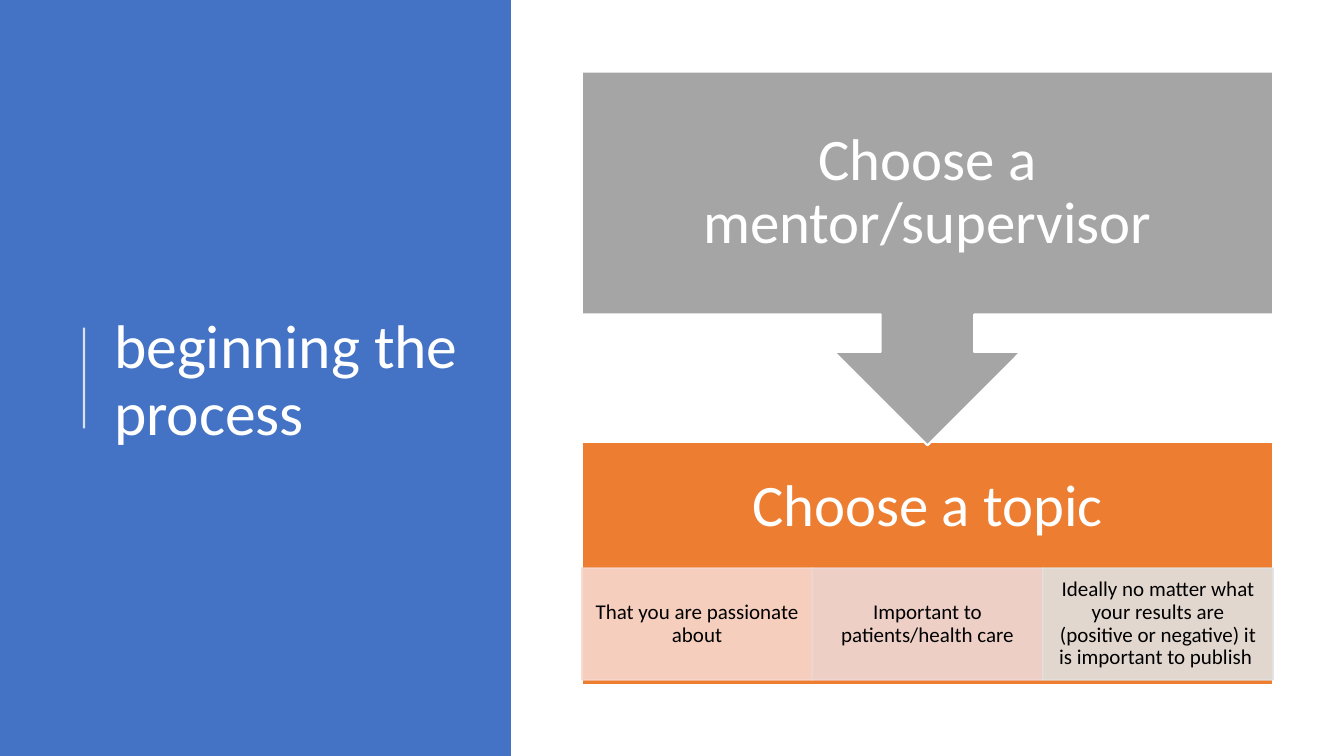
import pptx
import pptx.util
import pptx.dml.color
import pptx.enum.shapes
import pptx.enum.text
import pptx.oxml
import pptx.oxml.ns

Pt = pptx.util.Pt
KIND = pptx.enum.shapes.MSO_SHAPE
ALIGN = pptx.enum.text.PP_ALIGN
WHITE = "FFFFFF"


def paint(fill, color, alpha=100):
    fill.solid()
    fill.fore_color.rgb = pptx.dml.color.RGBColor.from_string(color)
    if alpha < 100:
        tint = fill._xPr.find(".//" + pptx.oxml.ns.qn("a:srgbClr"))
        node = pptx.oxml.parse_xml(
            f'<a:alpha {pptx.oxml.ns.nsdecls("a")} val="{alpha * 1000}"/>')
        tint.append(node)


def write(shape, text, size, color, pads, align):
    frame = shape.text_frame
    frame.text = text
    frame.word_wrap = True
    frame.vertical_anchor = pptx.enum.text.MSO_ANCHOR.MIDDLE
    frame.margin_left, frame.margin_top, frame.margin_right, frame.margin_bottom = map(Pt, pads)
    para = frame.paragraphs[0]
    para.alignment = align
    para.line_spacing = 0.9
    font = para.runs[0].font
    font.name = "Calibri"
    font.size = Pt(size)
    font.color.rgb = pptx.dml.color.RGBColor.from_string(color)


def block(slide, kind, box, fill, edge=None, width=1.5, alpha=100):
    shape = slide.shapes.add_shape(kind, *map(Pt, box))
    shape.shadow.inherit = False
    paint(shape.fill, fill, alpha)
    if edge:
        paint(shape.line.fill, edge, alpha)
        shape.line.width = Pt(width)
    else:
        shape.line.fill.background()
    return shape


def panel(slide, box, title):
    left, top, width, height = box
    block(slide, KIND.RECTANGLE, box, "4472C4")
    area = (left + 74.4, top + 56.2, width - 99.4, height - 106.6)
    text = slide.shapes.add_textbox(*map(Pt, area))
    write(text, title, 44, WHITE, (7.2, 3.6, 7.2, 3.6), ALIGN.LEFT)
    mid = top + height / 2
    ends = (left + 60, mid + 36, left + 60, mid - 36)
    rule = slide.shapes.add_connector(
        pptx.enum.shapes.MSO_CONNECTOR.STRAIGHT, *map(Pt, ends))
    paint(rule.line.fill, WHITE, 80)
    rule.line.width = Pt(1.5)
    rule._element.spPr.append(pptx.oxml.parse_xml(
        f'<a:effectLst {pptx.oxml.ns.nsdecls("a")}/>'))


def topic(slide, box, title, cells):
    left, top, width, height = box
    head = height * 0.54
    base = block(slide, KIND.RECTANGLE, box, "ED7D31", WHITE)
    write(base, title, 42, WHITE, (24, 24, 24, height - head + 24), ALIGN.CENTER)
    step = width / len(cells)
    for i, (text, color) in enumerate(cells):
        spot = (left + i * step, top + height * 0.52, step, height * 0.46)
        cell = block(slide, KIND.RECTANGLE, spot, color, color, 1, 90)
        write(cell, text, 15, "000000", (8.4, 1.5, 8.4, 1.5), ALIGN.CENTER)


def mentor(slide, box, title):
    shape = block(slide, KIND.DOWN_ARROW_CALLOUT, box, "A5A5A5", WHITE)
    write(shape, title, 42, WHITE, (24, 24, 24, 24), ALIGN.CENTER)


def main():
    deck = pptx.Presentation()
    deck.slide_width, deck.slide_height = Pt(960), Pt(540)
    slide = deck.slides.add_slide(deck.slide_layouts[6])
    panel(slide, (0, 0, 365, 540), "beginning the process")
    topic(slide, (415.6, 315.5, 493.8, 173.6), "Choose a topic", [
        ("That you are passionate about", "F8D7CE"),
        ("Important to patients/health care", "EDD9D7"),
        ("Ideally no matter what your results are (positive or negative) "
         "it is important to publish ", "E1E1E1"),
    ])
    mentor(slide, (415.6, 51.1, 493.8, 267), "Choose a mentor/supervisor")
    deck.save("out.pptx")


if __name__ == "__main__":
    main()
